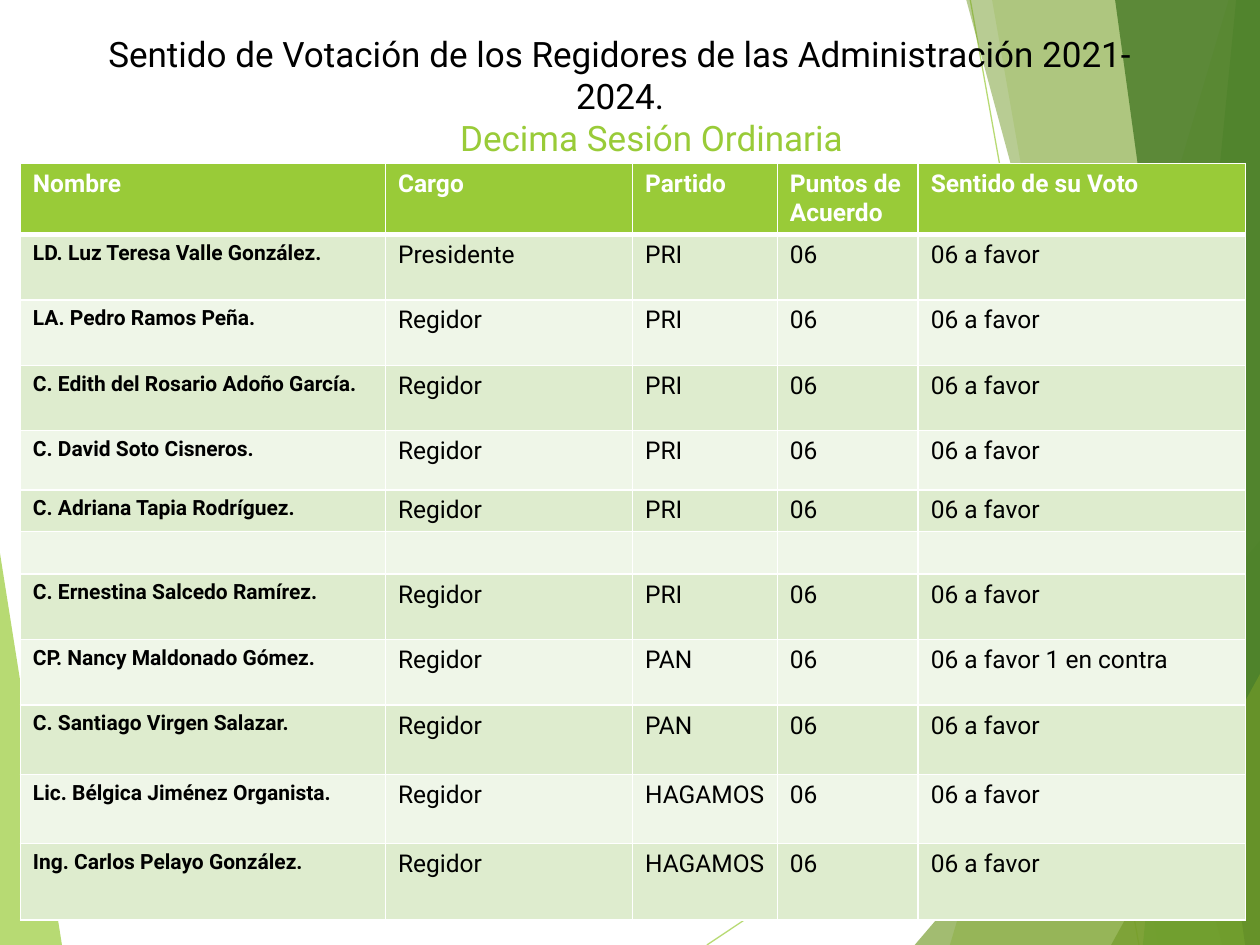
from lxml.etree import SubElement
from pptx import Presentation
from pptx.dml.color import RGBColor
from pptx.enum.shapes import MSO_CONNECTOR as Connector
from pptx.enum.text import MSO_ANCHOR as Anchor, MSO_AUTO_SIZE as AutoSize, PP_ALIGN as Align
from pptx.oxml.ns import qn
from pptx.util import Cm, Pt

LIME = RGBColor(0x99, 0xCB, 0x38)
OLIVE = RGBColor(0x73, 0x9A, 0x28)
GREEN = RGBColor(0x63, 0xA5, 0x37)
DARK_GREEN = RGBColor(0x4A, 0x7C, 0x29)
BAND_DARK = RGBColor(0xDE, 0xEC, 0xCE)
BAND_LIGHT = RGBColor(0xEF, 0xF6, 0xE8)
WHITE = RGBColor(0xFF, 0xFF, 0xFF)
BLACK = RGBColor(0x00, 0x00, 0x00)

WIDTH, HEIGHT = 25.4, 19.05

HEADERS = ["Nombre", "Cargo", "Partido", "Puntos de Acuerdo", "Sentido de su Voto"]
COLUMN_WIDTHS = [7.36, 4.98, 2.92, 2.84, 6.6]
ROW_HEIGHTS = [1.4, 1.32, 1.32, 1.32, 1.19, 0.84, 0.84, 1.32, 1.32, 1.4, 1.4, 1.54]
POINTS = "06"
IN_FAVOUR = "06 a favor"
MEMBERS = [
    ("LD. Luz Teresa Valle González.", "Presidente", "PRI", POINTS, IN_FAVOUR),
    ("LA. Pedro Ramos Peña.", "Regidor", "PRI", POINTS, IN_FAVOUR),
    ("C. Edith del Rosario Adoño García.", "Regidor", "PRI", POINTS, IN_FAVOUR),
    ("C. David Soto Cisneros.", "Regidor", "PRI", POINTS, IN_FAVOUR),
    ("C. Adriana Tapia Rodríguez.", "Regidor", "PRI", POINTS, IN_FAVOUR),
    ("", "", "", "", ""),
    ("C. Ernestina Salcedo Ramírez.", "Regidor", "PRI", POINTS, IN_FAVOUR),
    ("CP. Nancy Maldonado Gómez.", "Regidor", "PAN", POINTS, "06 a favor 1 en contra"),
    ("C. Santiago Virgen Salazar.", "Regidor", "PAN", POINTS, IN_FAVOUR),
    ("Lic. Bélgica Jiménez Organista.", "Regidor", "HAGAMOS", POINTS, IN_FAVOUR),
    ("Ing. Carlos Pelayo González.", "Regidor", "HAGAMOS", POINTS, IN_FAVOUR),
]


class SlideBuilder:
    font = "Roboto"
    title_size = 20
    text_size = 14
    name_size = 12

    def __init__(self, slide):
        self.slide = slide

    def set_alpha(self, properties, percent):
        color = properties.find(qn("a:solidFill"))[0]
        SubElement(color, qn("a:alpha"), val=str(percent * 1000))

    def polygon(self, points, color, alpha):
        corners = [(Cm(x), Cm(y)) for x, y in points]
        builder = self.slide.shapes.build_freeform(*corners[0])
        builder.add_line_segments(corners[1:], close=True)
        shape = builder.convert_to_shape()
        shape.shadow.inherit = False
        shape.fill.solid()
        shape.fill.fore_color.rgb = color
        shape.line.fill.background()
        self.set_alpha(shape.element.spPr, alpha)

    def right_band(self, top_x, bottom_x, color, alpha):
        points = [(top_x, 0), (bottom_x, HEIGHT), (WIDTH, HEIGHT), (WIDTH, 0)]
        self.polygon(points, color, alpha)

    def right_corner(self, bottom_x, right_y, color, alpha):
        points = [(bottom_x, HEIGHT), (WIDTH, right_y), (WIDTH, HEIGHT)]
        self.polygon(points, color, alpha)

    def line(self, start, end):
        ends = [Cm(value) for value in (*start, *end)]
        connector = self.slide.shapes.add_connector(Connector.STRAIGHT, *ends)
        connector.line.color.rgb = LIME
        connector.line.width = Pt(0.75)
        properties = connector.element.spPr
        self.set_alpha(properties.find(qn("a:ln")), 70)
        SubElement(properties, qn("a:effectLst"))

    def run(self, paragraph, text, size, color, bold=False):
        run = paragraph.add_run()
        run.text = text
        run.font.name = self.font
        run.font.size = Pt(size)
        run.font.bold = bold
        run.font.color.rgb = color

    def title(self, heading, session):
        title = self.slide.shapes.title
        title.left, title.top, title.width, title.height = Cm(1.07), Cm(0.53), Cm(22.86), Cm(3.99)
        frame = title.text_frame
        frame.auto_size = AutoSize.NONE
        frame.word_wrap = True
        frame.vertical_anchor = Anchor.TOP
        frame.margin_left = frame.margin_right = Cm(0.35)
        for text, color in ((heading, BLACK), (session, LIME)):
            paragraph = frame.paragraphs[0] if color == BLACK else frame.add_paragraph()
            paragraph.alignment = Align.CENTER
            self.run(paragraph, text, self.title_size, color)
        paragraph._p.get_or_add_pPr().set("marL", str(Cm(1.27)))
        self.slide.shapes._spTree.append(title.element)

    def border(self, cell, side, width):
        line = SubElement(cell._tc.get_or_add_tcPr(), qn(f"a:ln{side}"), w=str(Pt(width)))
        fill = SubElement(line, qn("a:solidFill"))
        SubElement(fill, qn("a:srgbClr"), val=str(WHITE))

    def cell(self, cell, text, row, column):
        cell.margin_right = Cm(0.1)
        for side in "LRTB":
            under_header = (row, side) in ((0, "B"), (1, "T"))
            self.border(cell, side, 3 if under_header else 1)
        cell.fill.solid()
        if row == 0:
            cell.fill.fore_color.rgb = LIME
        else:
            cell.fill.fore_color.rgb = BAND_DARK if row % 2 else BAND_LIGHT
        paragraph = cell.text_frame.paragraphs[0]
        if not text:
            SubElement(paragraph._p, qn("a:endParaRPr"), sz=str(self.text_size * 100))
            return
        is_name = row > 0 and column == 0
        size = self.name_size if is_name else self.text_size
        self.run(paragraph, text, size, BLACK if row else WHITE, bold=row == 0 or is_name)

    def table(self, left, top, rows, widths, heights):
        frame = self.slide.shapes.add_table(
            len(rows), len(widths), Cm(left), Cm(top), Cm(sum(widths)), Cm(sum(heights)))
        table = frame.table
        table.horz_banding = False
        for column, width in zip(table.columns, widths):
            column.width = Cm(width)
        for row, height in zip(table.rows, heights):
            row.height = Cm(height)
        for row_index, texts in enumerate(rows):
            for column_index, text in enumerate(texts):
                self.cell(table.cell(row_index, column_index), text, row_index, column_index)


def main():
    presentation = Presentation()
    presentation.slide_width, presentation.slide_height = Cm(WIDTH), Cm(HEIGHT)
    builder = SlideBuilder(presentation.slides.add_slide(presentation.slide_layouts[5]))

    builder.polygon([(0, 11.15), (1.25, HEIGHT), (0, HEIGHT)], LIME, 70)
    builder.line((14.25, HEIGHT), (WIDTH, 11.6))
    builder.line((19.56, 0), (22.96, HEIGHT))
    builder.right_band(24.77, 19.15, LIME, 36)
    builder.right_band(20, 23.34, LIME, 20)
    builder.right_corner(18.44, 10.9, OLIVE, 66)
    builder.right_band(19.48, 24.64, OLIVE, 50)
    builder.right_band(24.92, 23.04, GREEN, 70)
    builder.right_band(22.48, 25.1, DARK_GREEN, 82)
    builder.right_corner(22.4, 13.59, OLIVE, 66)

    builder.title("Sentido de Votación de los Regidores de las Administración 2021-2024.",
                  "Decima Sesión Ordinaria")
    builder.table(0.41, 3.3, [HEADERS, *MEMBERS], COLUMN_WIDTHS, ROW_HEIGHTS)
    presentation.save("out.pptx")


if __name__ == "__main__":
    main()
